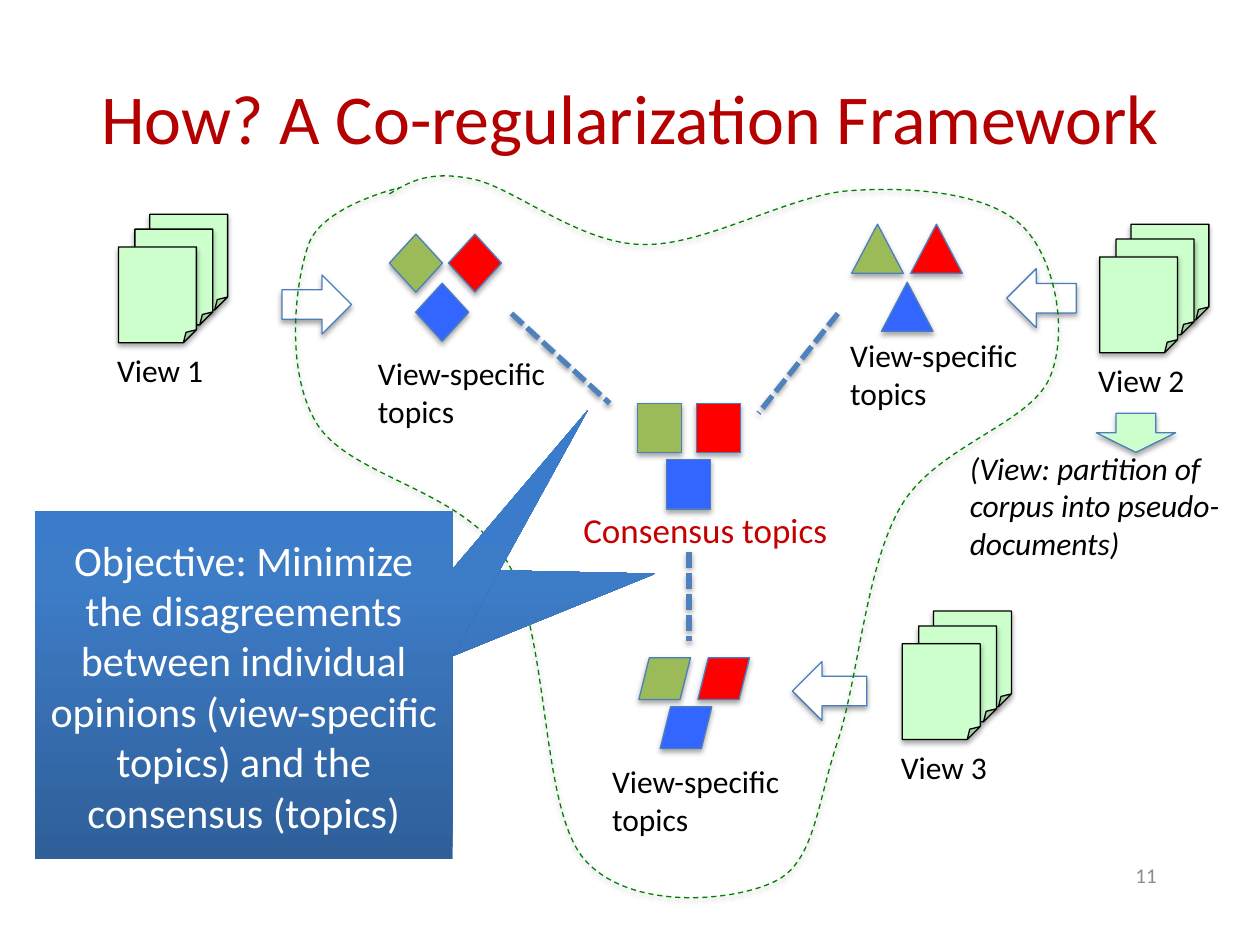
from copy import deepcopy
from lxml import etree
from pptx import Presentation
from pptx.dml.color import RGBColor
from pptx.enum.dml import MSO_LINE
from pptx.enum.shapes import MSO_CONNECTOR, MSO_SHAPE
from pptx.enum.text import MSO_ANCHOR, MSO_AUTO_SIZE, PP_ALIGN
from pptx.oxml.ns import qn
from pptx.util import Cm, Pt

LEFT, CENTER, RIGHT = PP_ALIGN.LEFT, PP_ALIGN.CENTER, PP_ALIGN.RIGHT
TOP, MIDDLE = MSO_ANCHOR.TOP, MSO_ANCHOR.MIDDLE
GROW, FIXED = MSO_AUTO_SIZE.SHAPE_TO_FIT_TEXT, MSO_AUTO_SIZE.NONE
DASH, SYS_DASH = MSO_LINE.DASH, MSO_LINE.SQUARE_DOT
STRAIGHT = MSO_CONNECTOR.STRAIGHT
PAGE, CALLOUT = MSO_SHAPE.FOLDED_CORNER, MSO_SHAPE.RECTANGULAR_CALLOUT
UP, DOWN = MSO_SHAPE.UP_ARROW, MSO_SHAPE.DOWN_ARROW
TRIANGLE, SKEWED = MSO_SHAPE.ISOSCELES_TRIANGLE, MSO_SHAPE.PARALLELOGRAM
SQUARE, DIAMOND = MSO_SHAPE.RECTANGLE, MSO_SHAPE.DIAMOND

THEME = {
    "font": "Calibri",
    "title": (40, "B40000"), "label": (18, "000000"), "consensus": (20, "C40000"),
    "callout": (24, "FFFFFF"), "number": (12, "8C8C8C"),
    "topics": ("9BBB59", "FF0000", "3366FF"),
    "page": "CCFFCC", "page_edge": "000000", "edge": "4B7EBC", "white": "FFFFFF",
    "link": "4F81BD", "outline": "008000",
    "gradient": ((0, "2F5F99"), (0.8, "3D7CC7"), (1, "3A7CCB")),
}

TITLE = "How? A Co-regularization Framework"
OBJECTIVE = ("Objective: Minimize the disagreements between individual opinions "
             "(view-specific topics) and the consensus (topics)")
NOTE = "(View: partition of corpus into pseudo-documents)"

VIEWS = [("View 1", 2.11, 6.96), ("View 2", 21.89, 7.16), ("View 3", 17.91, 14.96)]
PAGE_OFFSETS = [(0.91, -2.64), (0.61, -2.34), (0.28, -1.98)]
PAGE_SIZE = (1.57, 1.93)

TOPIC_STEP = 1.19
TOPIC_SETS = [
    (TRIANGLE, (17.17, 4.52), (1.04, 0.99), (0.6, 1.17),
     "View-specific topics", "label", (16.89, 6.65, 3.99, 1.8)),
    (SKEWED, (12.88, 13.26), (1.04, 0.84), (0.43, 0.99),
     "View-specific\ntopics", "label", (12.09, 15.24, 3.99, 1.8)),
    (SQUARE, (12.85, 8.13), (0.89, 0.99), (0.58, 1.14),
     "Consensus topics", "consensus", (11.51, 10.13, 5.49, 1.12)),
    (DIAMOND, (7.85, 4.72), (1.07, 1.17), (0.53, 0.99),
     "View-specific topics", "label", (7.37, 7.01, 4.34, 1.8)),
]

ARROWS = [
    (UP, (16.13, 13.18, 1.19, 1.5), 270, "white"),
    (UP, (5.79, 5.44, 1.19, 1.4), 90, "white"),
    (UP, (20.4, 5.31, 1.19, 1.4), 270, "white"),
    (DOWN, (22.1, 8.33, 1.6, 0.79), 0, "page"),
]
LINKS = [(10.31, 6.32, 12.29, 8.13), (16.89, 6.32, 15.29, 8.33),
         (13.89, 11.13, 13.89, 12.93)]

OUTLINE_BOX = (5.97, 3.56, 15.39, 14.55)
OUTLINE_START = (7.85, 3.91)
OUTLINE_CURVES = [
    ((8.26, 3.66), (8.66, 3.43), (9.53, 3.61)),
    ((10.36, 3.78), (11.66, 4.9), (12.93, 4.93)),
    ((14.22, 4.98), (15.95, 3.89), (17.22, 3.84)),
    ((18.49, 3.76), (19.94, 3.91), (20.6, 4.55)),
    ((21.26, 5.18), (21.56, 6.68), (21.16, 7.62)),
    ((20.75, 8.56), (18.87, 8.99), (18.16, 10.21)),
    ((17.45, 11.43), (17.3, 13.69), (16.89, 14.94)),
    ((16.46, 16.21), (16.43, 17.4), (15.6, 17.78)),
    ((14.73, 18.19), (12.65, 18.36), (11.76, 17.3)),
    ((10.87, 16.21), (11.1, 12.75), (10.21, 11.3)),
    ((9.32, 9.86), (7.09, 9.63), (6.4, 8.56)),
    ((5.74, 7.52), (5.94, 5.72), (6.22, 4.93)),
    ((6.5, 4.14), (8.08, 3.78), (8.08, 3.78)),
]

CALLOUT_BOX = (0.71, 10.31, 8.41, 7.01)
CALLOUTS = [((0.987, -0.321), ""), ((0.825, -0.792), OBJECTIVE)]


def rgb(value):
    return RGBColor.from_string(value)


def cm(values):
    return [Cm(v) for v in values]


def write(sp, text, style, align=LEFT, anchor=TOP, wrap=True, fit=FIXED, italic=None):
    size, color = THEME[style]
    tf = sp.text_frame
    tf.text = text
    for name, value in {"word_wrap": wrap, "auto_size": fit,
                        "vertical_anchor": anchor}.items():
        setattr(tf, name, value)
    for p in tf.paragraphs:
        p.alignment = align
        for r in p.runs:
            for name, value in {"name": THEME["font"], "size": Pt(size),
                                "italic": italic}.items():
                setattr(r.font, name, value)
            r.font.color.rgb = rgb(color)


def add_text(shapes, box, text, style, **options):
    write(shapes.add_textbox(*cm(box)), text, style, **options)


def set_line(sp, color, width, dash=None):
    sp.line.color.rgb = rgb(color)
    sp.line.width = Pt(width)
    if dash:
        sp.line.dash_style = dash


def add_shadow(sp, alpha=35, distance=1.8):
    effects = etree.SubElement(sp._element.spPr, qn("a:effectLst"))
    shadow = etree.SubElement(effects, qn("a:outerShdw"), blurRad=str(Pt(3.1)),
                              dist=str(Pt(distance)), dir="5400000", rotWithShape="0")
    color = etree.SubElement(shadow, qn("a:srgbClr"), val="000000")
    etree.SubElement(color, qn("a:alpha"), val=str(alpha * 1000))


def add_solid(shapes, kind, box, fill, edge):
    sp = shapes.add_shape(kind, *cm(box))
    sp.fill.solid()
    sp.fill.fore_color.rgb = rgb(fill)
    set_line(sp, edge, 0.75)
    add_shadow(sp)
    return sp


def add_outline(shapes):
    left, top, width, height = OUTLINE_BOX
    right, bottom = left + width, top + height
    builder = shapes.build_freeform(Cm(left), Cm(top))
    builder.add_line_segments([cm((right, top)), cm((right, bottom))], close=False)
    sp = builder.convert_to_shape()
    curve = next(sp._element.iter(qn("a:path")))
    for child in list(curve):
        curve.remove(child)
    steps = [("a:moveTo", [OUTLINE_START])]
    steps += [("a:cubicBezTo", points) for points in OUTLINE_CURVES]
    for tag, points in steps:
        step = etree.SubElement(curve, qn(tag))
        for x, y in points:
            etree.SubElement(step, qn("a:pt"), x=str(Cm(x - left)), y=str(Cm(y - top)))
    sp.fill.background()
    set_line(sp, THEME["outline"], 0.75, DASH)
    add_shadow(sp, 38, 1.6)


def add_callout(shapes, pointer, text):
    sp = shapes.add_shape(CALLOUT, *cm(CALLOUT_BOX))
    for i, value in enumerate(pointer):
        sp.adjustments[i] = value
    sp.fill.gradient()
    sp.fill.gradient_angle = 90
    stop_list = next(sp._element.iter(qn("a:gsLst")))
    stop_list.append(deepcopy(stop_list[-1]))
    for stop, (position, color) in zip(sp.fill.gradient_stops, THEME["gradient"]):
        stop.position = position
        stop.color.rgb = rgb(color)
    sp.line.fill.background()
    sp.shadow.inherit = False
    if text:
        write(sp, text, "callout", align=CENTER, anchor=MIDDLE)


prs = Presentation()
prs.slide_width, prs.slide_height = Cm(25.4), Cm(19.05)
s = prs.slides.add_slide(prs.slide_layouts[5])
title = s.shapes.title
for name, value in zip(("left", "top", "width", "height"), (1.27, 0.76, 22.86, 3.18)):
    setattr(title, name, Cm(value))
write(title, TITLE, "title", align=CENTER, anchor=MIDDLE)
add_text(s.shapes, (17.78, 17.15, 5.79, 0.99), "11", "number", align=RIGHT, anchor=MIDDLE)

for kind, (x, y), size, (dx, dy), text, style, label_box in TOPIC_SETS:
    group = s.shapes.add_group_shape().shapes
    places = [(x, y), (x + TOPIC_STEP, y), (x + dx, y + dy)]
    for place, color in zip(places, THEME["topics"]):
        add_solid(group, kind, place + size, color, THEME["edge"])
    add_text(group, label_box, text, style, fit=GROW)

for kind, box, turn, fill in ARROWS:
    add_solid(s.shapes, kind, box, THEME[fill], THEME["edge"]).rotation = turn

for ends in LINKS:
    link = s.shapes.add_connector(STRAIGHT, *cm(ends))
    set_line(link, THEME["link"], 3, SYS_DASH)
    add_shadow(link, 38, 1.6)

for text, x, y in VIEWS:
    group = s.shapes.add_group_shape().shapes
    add_text(group, (x, y, 2.26, 1.02), text, "label", wrap=False, fit=GROW)
    for dx, dy in PAGE_OFFSETS:
        add_solid(group, PAGE, (x + dx, y + dy) + PAGE_SIZE,
                  THEME["page"], THEME["page_edge"])

add_text(s.shapes, (19.3, 8.92, 5.79, 2.57), NOTE, "label", fit=GROW, italic=True)
add_outline(s.shapes)
callouts = s.shapes.add_group_shape().shapes
for pointer, text in CALLOUTS:
    add_callout(callouts, pointer, text)

prs.save("out.pptx")
